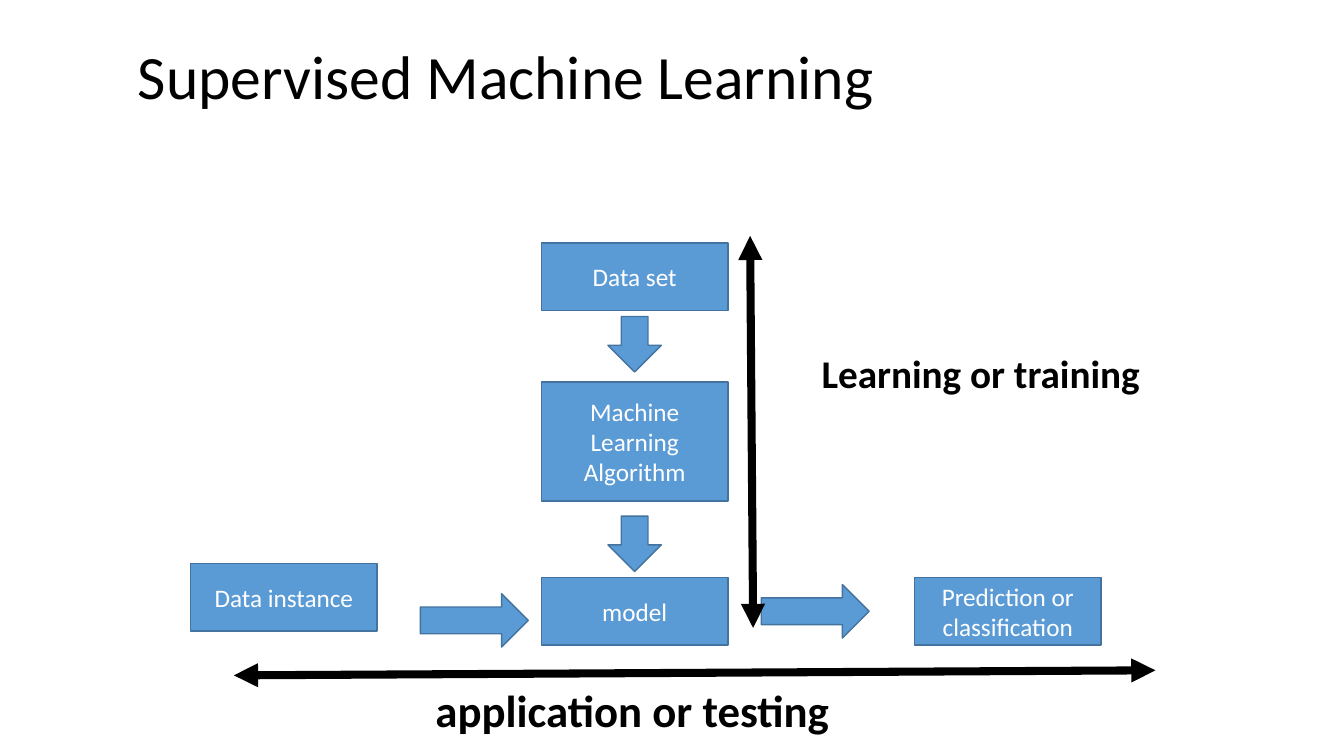
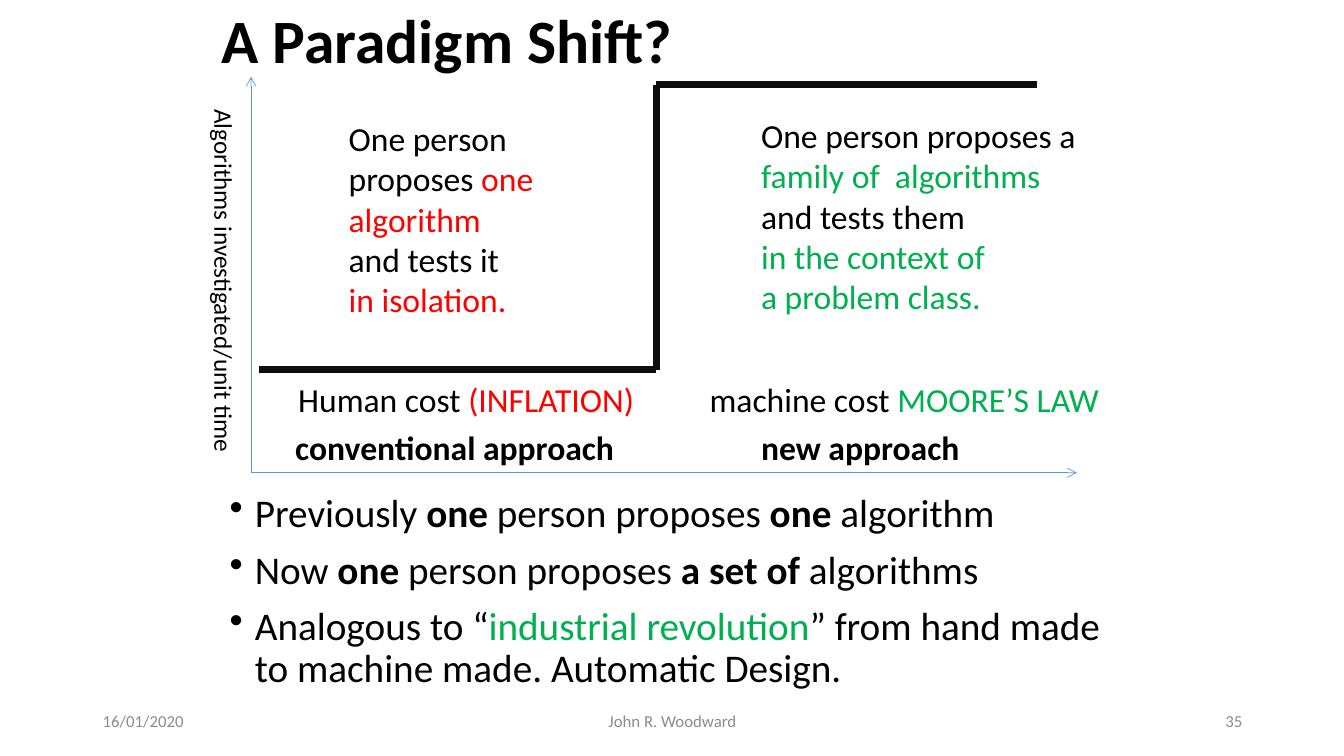
from itertools import pairwise

from lxml import etree
from pptx import Presentation
from pptx.dml.color import RGBColor
from pptx.enum.shapes import MSO_CONNECTOR, MSO_SHAPE
from pptx.enum.text import MSO_ANCHOR, PP_ALIGN
from pptx.oxml.ns import qn
from pptx.util import Inches, Pt

STRAIGHT = MSO_CONNECTOR.STRAIGHT
RECT, DOWN, RIGHT_ARROW = MSO_SHAPE.RECTANGLE, MSO_SHAPE.DOWN_ARROW, MSO_SHAPE.RIGHT_ARROW
TOP, MIDDLE = MSO_ANCHOR.TOP, MSO_ANCHOR.MIDDLE
LEFT, CENTER, RIGHT = PP_ALIGN.LEFT, PP_ALIGN.CENTER, PP_ALIGN.RIGHT

FONT = "Calibri"
COLORS = {
    "text": "000000",
    "white": "FFFFFF",
    "box": "5B9BD5",
    "outline": "43739E",
    "step": "0D0D0D",
    "red": "FF0000",
    "green": "00B050",
    "footer": "8C8C8C",
}


def rgb(name):
    return RGBColor.from_string(COLORS[name])


def style_paragraph(p, size, color="text", bold=False, align=LEFT):
    p.alignment = align
    p.font.name = FONT
    p.font.size = Pt(size)
    p.font.bold = bold
    p.font.color.rgb = rgb(color)


def add_runs(p, parts):
    """Add runs; a part is plain text or (text, "bold" or a colour name)."""
    for part in parts:
        text, accent = (part, None) if isinstance(part, str) else part
        r = p.add_run()
        r.text = text
        if accent == "bold":
            r.font.bold = True
        elif accent:
            r.font.color.rgb = rgb(accent)


def add_text(slide, box, lines, size, anchor=TOP, **style):
    """Add a text box with one paragraph per line, each line a list of parts."""
    sp = slide.shapes.add_textbox(*map(Inches, box))
    tf = sp.text_frame
    tf.word_wrap = True
    tf.vertical_anchor = anchor
    for i, parts in enumerate(lines):
        p = tf.paragraphs[0] if i == 0 else tf.add_paragraph()
        style_paragraph(p, size, **style)
        add_runs(p, parts)
    return sp


def add_title(slide, box, text, bold=False):
    sp = add_text(slide, box, [[text]], 44, MIDDLE, bold=bold)
    sp.text_frame.paragraphs[0].line_spacing = 0.9


def add_bullets(slide, box, lines):
    sp = add_text(slide, box, lines, 28)
    for p in sp.text_frame.paragraphs:
        p.line_spacing = 0.9
        p.space_before = Pt(10)
        pPr = p._p.get_or_add_pPr()
        pPr.set("marL", str(Inches(0.25)))
        pPr.set("indent", str(Inches(-0.25)))
        bullet = etree.Element(qn("a:buChar"), char="•")
        pPr.find(qn("a:defRPr")).addprevious(bullet)


def add_block(slide, kind, box, text=""):
    """Add a blue box or block arrow."""
    sp = slide.shapes.add_shape(kind, *map(Inches, box))
    sp.shadow.inherit = False
    sp.fill.solid()
    sp.fill.fore_color.rgb = rgb("box")
    sp.line.color.rgb = rgb("outline")
    sp.line.width = Pt(1)
    if text:
        tf = sp.text_frame
        tf.word_wrap = True
        tf.vertical_anchor = MIDDLE
        p = tf.paragraphs[0]
        style_paragraph(p, 18, "white", align=CENTER)
        add_runs(p, [text])


def add_line(slide, start, end, color, width, head=None, tail=None):
    line = slide.shapes.add_connector(STRAIGHT, *map(Inches, (*start, *end)))
    line.line.color.rgb = rgb(color)
    line.line.width = Pt(width)
    ln = line.line._get_or_add_ln()
    for tag, kind in (("a:headEnd", head), ("a:tailEnd", tail)):
        if kind:
            etree.SubElement(ln, qn(tag), type=kind)
    etree.SubElement(line._element.spPr, qn("a:effectLst"))


def add_footer(slide, date, author, number):
    for left, width, text, align in (
        (0.92, 3, date, LEFT),
        (4.42, 4.5, author, CENTER),
        (9.42, 3, number, RIGHT),
    ):
        add_text(slide, (left, 6.95, width, 0.4), [[text]], 12, MIDDLE,
                 color="footer", align=align)


def build_learning(slide):
    add_title(slide, (1.27, 0.06, 11.5, 1.45), "Supervised Machine Learning")

    box_w, box_h, center_x = 1.85, 0.67, 5.37
    for left, top, height, text in (
        (center_x, 2.41, box_h, "Data set"),
        (center_x, 3.79, 1.18, "Machine Learning Algorithm"),
        (center_x, 5.73, box_h, "model"),
        (9.07, 5.73, box_h, "Prediction or classification"),
        (1.89, 5.59, box_h, "Data instance"),
    ):
        add_block(slide, RECT, (left, top, box_w, height), text)
    for top in (3.14, 5.12):
        add_block(slide, DOWN, (6.03, top, 0.53, 0.55))
    for left, top in ((4.17, 5.89), (7.55, 5.8)):
        add_block(slide, RIGHT_ARROW, (left, top, 1.07, 0.53))

    for start, end in (((7.44, 2.34), (7.47, 6.23)), ((11.46, 6.65), (2.32, 6.7))):
        add_line(slide, start, end, "text", 5.75, "triangle", "triangle")
    add_text(slide, (8.05, 3.42, 3.4, 0.57), [["Learning or training"]], 28, bold=True)
    add_text(slide, (4.22, 6.72, 4.15, 0.64), [["application or testing"]], 32, bold=True)


def build_paradigm(slide):
    add_title(slide, (2.1, -0.19, 9, 1.25), "A Paradigm Shift?", bold=True)

    origin = (2.49, 4.69)
    for end in ((10.68, 4.69), (2.49, 0.76)):
        add_line(slide, origin, end, "box", 0.5, tail="arrow")
    corners = [(2.57, 3.67), (6.51, 3.67), (6.51, 0.84), (10.29, 0.84)]
    for start, end in pairwise(corners):
        add_line(slide, start, end, "step", 5)
    axis_label = add_text(slide, (0.4, 2.61, 3.65, 0.4),
                          [["Algorithms investigated/unit time"]], 18)
    axis_label.rotation = 90

    add_text(slide, (3.36, 1.12, 2.13, 2.12), [
        ["One person"],
        ["proposes ", ("one", "red")],
        [("algorithm", "red")],
        ["and tests it"],
        [("in isolation.", "red")],
    ], 24)
    add_text(slide, (7.45, 1.09, 3.71, 2.12), [
        ["One person proposes a"],
        [("family of  algorithms", "green")],
        ["and tests them"],
        [("in the context of", "green")],
        [("a problem class.", "green")],
    ], 24)
    for left, parts in (
        (2.86, ["Human cost ", ("(INFLATION)", "red")]),
        (6.94, ["machine cost ", ("MOORE’S LAW", "green")]),
    ):
        add_text(slide, (left, 3.71, 4.2, 0.5), [parts], 24)
    for left, text in ((2.83, "conventional approach"), (7.45, "new approach")):
        add_text(slide, (left, 4.19, 3.6, 0.5), [[text]], 24, bold=True)

    add_bullets(slide, (2.18, 4.85, 9, 2.16), [
        ["Previously ", ("one", "bold"), " person proposes ", ("one", "bold"), " algorithm"],
        ["Now ", ("one", "bold"), " person proposes ", ("a set of ", "bold"), "algorithms"],
        ["Analogous to “", ("industrial revolution", "green"),
         "” from hand made to machine made. Automatic Design."],
    ])
    add_footer(slide, "16/01/2020", "John R. Woodward", "35")


def main():
    prs = Presentation()
    prs.slide_width = Inches(13.33)
    prs.slide_height = Inches(7.5)
    blank = prs.slide_layouts[6]
    for build in (build_learning, build_paradigm):
        build(prs.slides.add_slide(blank))
    prs.save("out.pptx")


if __name__ == "__main__":
    main()
